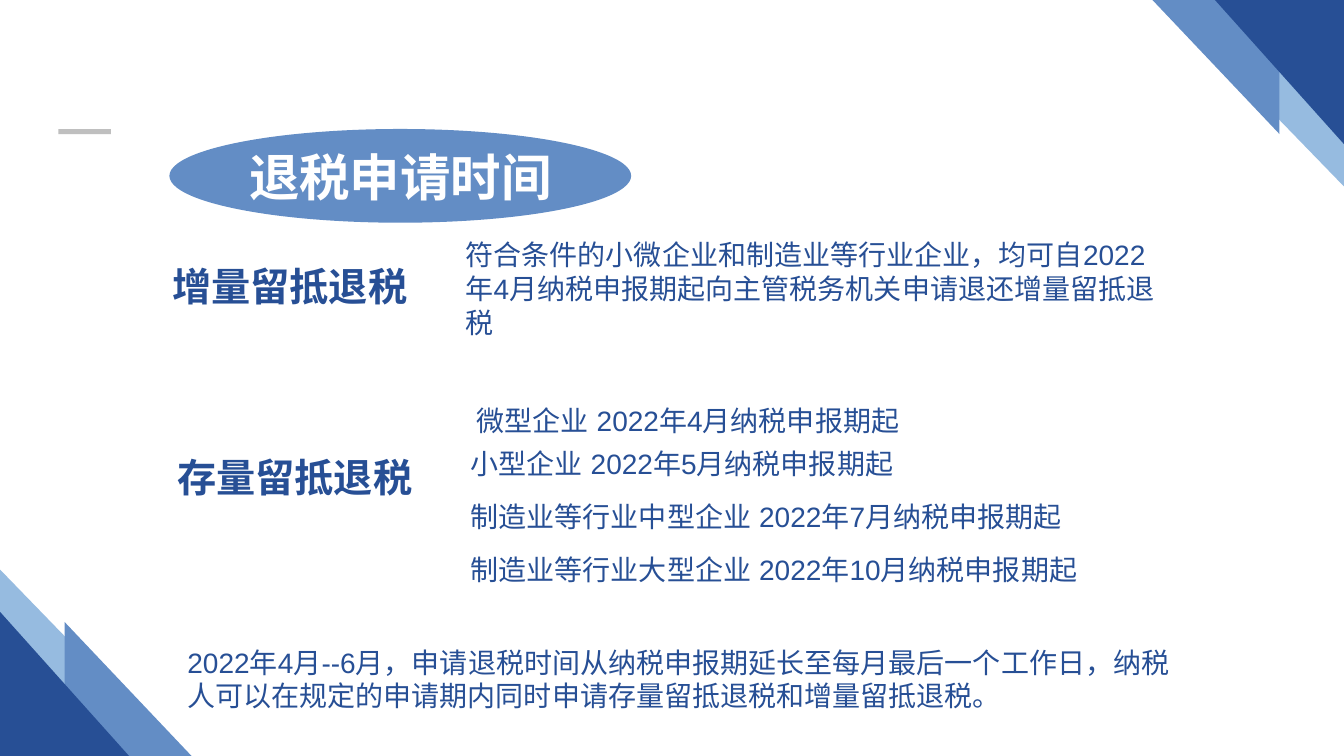
from lxml import etree
from pptx import Presentation
from pptx.dml.color import RGBColor
from pptx.enum.shapes import MSO_SHAPE
from pptx.enum.text import MSO_ANCHOR, PP_ALIGN
from pptx.oxml.ns import qn
from pptx.util import Inches, Pt

TRIANGLE, OVAL, RECT = MSO_SHAPE.RIGHT_TRIANGLE, MSO_SHAPE.OVAL, MSO_SHAPE.RECTANGLE
MIDDLE, TOP = MSO_ANCHOR.MIDDLE, MSO_ANCHOR.TOP
CENTER, LEFT = PP_ALIGN.CENTER, PP_ALIGN.LEFT

WIDTH, HEIGHT = 13.33, 7.5
FONT = "Arial"
NAVY, BLUE, SKY, GREY, WHITE = "274F95", "638DC5", "96BBE0", "BFBFBF", "FFFFFF"
INSET = 0.1
LABEL_INSET = 0.28

TITLE = "退税申请时间"

# left, top, width, height, colour; the opposite corner is the same, turned round
CORNER = [
    (0, 5.65, 1.28, 1.32, SKY),
    (0.64, 6.17, 1.26, 1.33, BLUE),
    (0, 6.07, 1.28, 1.43, NAVY),
]

LABELS = [
    ("增量留抵退税", (1.43, 2.55, 3.14, 1.04)),
    ("存量留抵退税", (1.48, 4.45, 3.14, 1.04)),
]

BODY = [
    ("符合条件的小微企业和制造业等行业企业，均可自2022年4月纳税申报期起向主管税务机关申请退还增量留抵退税",
     (4.52, 2.31, 7.19, 1.11)),
    ("微型企业 2022年4月纳税申报期起", (4.63, 3.95, 5.4, 0.44)),
    ("小型企业 2022年5月纳税申报期起", (4.57, 4.38, 5.4, 0.44)),
    ("制造业等行业中型企业 2022年7月纳税申报期起", (4.57, 4.91, 6.96, 0.44)),
    ("制造业等行业大型企业 2022年10月纳税申报期起", (4.57, 5.43, 6.96, 0.44)),
    ("2022年4月--6月，申请退税时间从纳税申报期延长至每月最后一个工作日，"
     "纳税人可以在规定的申请期内同时申请存量留抵退税和增量留抵退税。",
     (1.76, 6.35, 9.95, 0.77)),
]


def rgb(color):
    return RGBColor.from_string(color)


def add_block(s, kind, box, color):
    sp = s.shapes.add_shape(kind, *map(Inches, box))
    sp.shadow.inherit = False
    sp.fill.solid()
    sp.fill.fore_color.rgb = rgb(color)
    sp.line.fill.background()
    return sp


def write(sp, text, size, color, bold=False, align=LEFT, anchor=TOP, inset=INSET):
    tf = sp.text_frame
    tf.word_wrap = True
    tf.vertical_anchor = anchor
    tf.margin_left = Inches(inset)
    tf.text = text
    p = tf.paragraphs[0]
    p.alignment = align
    r = p.runs[0]
    r.font.name, r.font.size, r.font.bold = FONT, Pt(size), bold
    r.font.color.rgb = rgb(color)
    etree.SubElement(r._r.get_or_add_rPr(), qn("a:ea")).set("typeface", FONT)


def add_text(s, box, text, size, **style):
    write(s.shapes.add_textbox(*map(Inches, box)), text, size, NAVY, **style)


def main():
    prs = Presentation()
    prs.slide_width, prs.slide_height = Inches(WIDTH), Inches(HEIGHT)
    s = prs.slides.add_slide(prs.slide_layouts[6])

    for x, y, w, h, color in CORNER:
        add_block(s, TRIANGLE, (x, y, w, h), color)
        turned = add_block(s, TRIANGLE, (WIDTH - x - w, HEIGHT - y - h, w, h), color)
        turned.rotation = 180

    add_block(s, RECT, (0.58, 1.28, 0.52, 0.05), GREY)
    title = add_block(s, OVAL, (1.68, 1.28, 4.58, 0.93), BLUE)
    write(title, TITLE, 36, WHITE, bold=True, align=CENTER, anchor=MIDDLE)

    for text, box in LABELS:
        add_text(s, box, text, 28, bold=True, inset=LABEL_INSET)
    for text, box in BODY:
        add_text(s, box, text, 20)

    prs.save("out.pptx")


if __name__ == "__main__":
    main()
